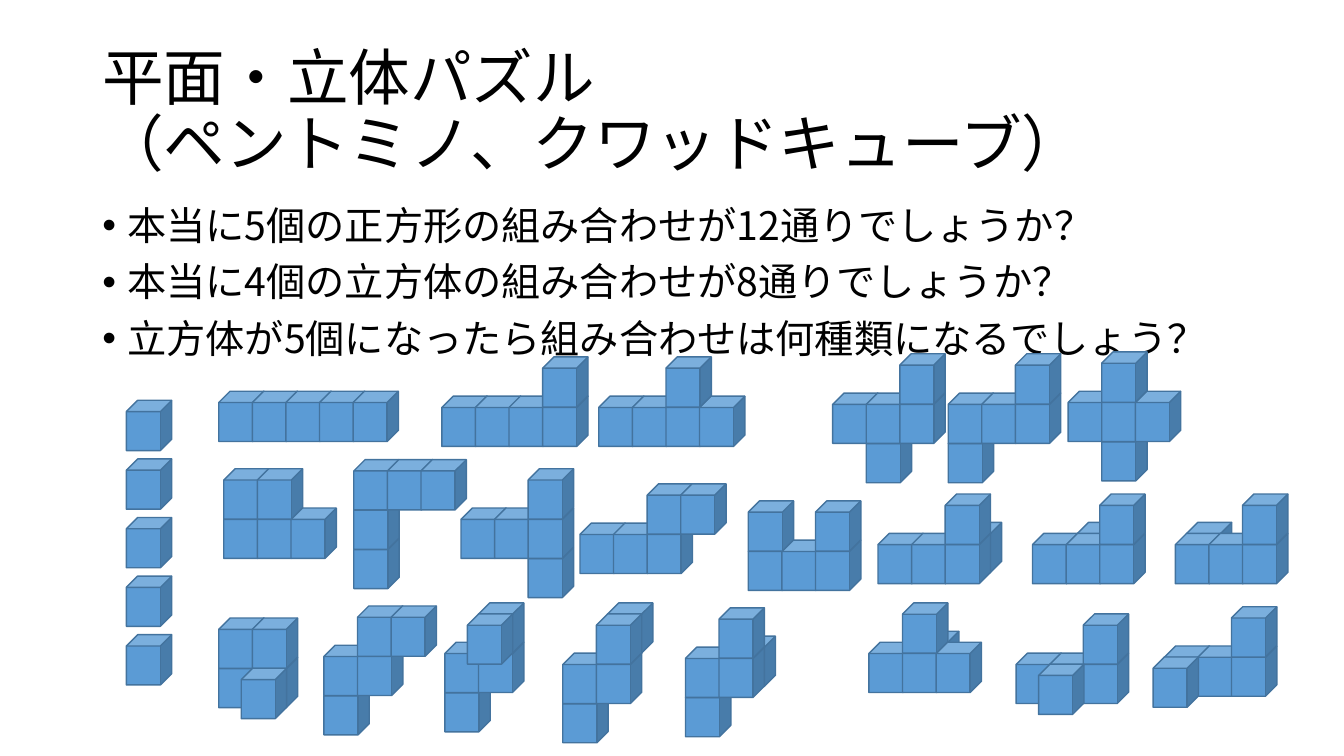
from dataclasses import dataclass

import pptx
import pptx.dml.color
import pptx.enum.shapes
import pptx.enum.text
import pptx.oxml.ns
import pptx.util
from lxml import etree

BLUE = pptx.dml.color.RGBColor(0x5B, 0x9B, 0xD5)
EDGE = pptx.dml.color.RGBColor(0x43, 0x73, 0x9E)
BLACK = pptx.dml.color.RGBColor(0, 0, 0)
FONT = "Noto Sans CJK JP"

# Slide grid: 40 columns by 20 rows
WIDTH, HEIGHT = pptx.util.Inches(13.33), pptx.util.Inches(7.5)
COL, ROW = WIDTH / 40, HEIGHT / 20

# Cube size and the steps between neighbours, in columns and rows
CUBE_W, CUBE_H = 1.35, 1.33
STEP_X, STEP_Y = 1, 1.04
DEPTH_X, DEPTH_Y = 0.33, 0.29


@dataclass(frozen=True)
class Piece:
    """Cubes marked # in rows split by /, for up to three layers."""
    col: float
    row: float
    main: str
    back: str = ""
    front: str = ""


TITLE = "平面・立体パズル\v（ペントミノ、クワッドキューブ）"
QUESTIONS = [
    "本当に5個の正方形の組み合わせが12通りでしょうか？",
    "本当に4個の立方体の組み合わせが8通りでしょうか？",
    "立方体が5個になったら組み合わせは何種類になるでしょう？",
]

SINGLES = [Piece(3.76, 10.59 + 1.55 * i, "#") for i in range(5)]
FLAT_PIECES = [
    Piece(6.51, 10.35, "#####"),
    Piece(13.15, 9.44, "...#/####"),
    Piece(17.82, 9.44, "..#./####"),
    Piece(24.78, 9.36, "..#/###/.#."),
    Piece(28.22, 9.36, "..#/###/#.."),
    Piece(31.79, 9.31, ".#./###/.#."),
    Piece(6.66, 12.4, "##./###"),
    Piece(10.53, 12.16, "###/#../#.."),
    Piece(13.72, 12.4, "..#/###/..#"),
    Piece(17.26, 12.8, "..##/###."),
    Piece(22.27, 13.25, "#.#/###"),
    Piece(9.64, 16.03, ".##/##./#.."),
]
SOLID_PIECES = [
    Piece(26.13, 13.07, "..#/###", back=".../..#"),
    Piece(30.73, 13.07, "..#/###", back=".../.#."),
    Piece(34.98, 13.07, "..#/###", back=".../#.."),
    Piece(6.51, 16.35, "##/##", front="../.#"),
    Piece(13.24, 15.95, ".#/##/#.", front=".#"),
    Piece(16.75, 16.24, ".#/##/#.", back=".#"),
    Piece(20.4, 16.08, ".#/##/#.", back="../.#"),
    Piece(25.86, 15.95, ".#./###", back=".../.#."),
    Piece(30.24, 16.24, "..#/###", front=".../.#."),
    Piece(34.65, 16.05, "..#/###", front=".../#.."),
]


def add_bullet(p) -> None:
    pPr = p._p.get_or_add_pPr()
    indent = pptx.util.Inches(0.25)
    pPr.set("marL", str(indent))
    pPr.set("indent", str(-indent))
    etree.SubElement(pPr, pptx.oxml.ns.qn("a:buFont"), typeface="Arial")
    etree.SubElement(pPr, pptx.oxml.ns.qn("a:buChar"), char="•")


def add_text(s, lines: list[str], row: float, rows: float, *, size: float,
             before: float = 0, bullet: bool = False,
             anchor=pptx.enum.text.MSO_ANCHOR.TOP) -> None:
    box = s.shapes.add_textbox(round(2.75 * COL), round(row * ROW),
                               round(34.5 * COL), round(rows * ROW))
    tf = box.text_frame
    tf.word_wrap = True
    tf.vertical_anchor = anchor
    for i, line in enumerate(lines):
        p = tf.add_paragraph() if i else tf.paragraphs[0]
        p.text = line
        p.line_spacing = 0.9
        p.space_before = pptx.util.Pt(before)
        if bullet:
            add_bullet(p)
        for r in p.runs:
            r.font.size = pptx.util.Pt(size)
            r.font.name = FONT
            r.font.color.rgb = BLACK
            etree.SubElement(r.font._element, pptx.oxml.ns.qn("a:ea"), typeface=FONT)


def draw_cube(s, col: float, row: float) -> None:
    sp = s.shapes.add_shape(pptx.enum.shapes.MSO_SHAPE.CUBE,
                            round(col * COL), round(row * ROW),
                            round(CUBE_W * COL), round(CUBE_H * ROW))
    sp.shadow.inherit = False
    sp.fill.solid()
    sp.fill.fore_color.rgb = BLUE
    sp.line.color.rgb = EDGE
    sp.line.width = pptx.util.Pt(1)


def draw_piece(s, piece: Piece) -> None:
    # Farther cubes first: back to front, bottom to top, left to right
    for depth, layer in ((1, piece.back), (0, piece.main), (-1, piece.front)):
        for y, cells in reversed(list(enumerate(layer.split("/")))):
            for x, cell in enumerate(cells):
                if cell == "#":
                    draw_cube(s, piece.col + x * STEP_X + depth * DEPTH_X,
                              piece.row + y * STEP_Y - depth * DEPTH_Y)


def main() -> None:
    prs = pptx.Presentation()
    prs.slide_width, prs.slide_height = WIDTH, HEIGHT
    s = prs.slides.add_slide(prs.slide_layouts[6])

    # Title and questions
    add_text(s, [TITLE], 1.07, 3.87, size=44,
             anchor=pptx.enum.text.MSO_ANCHOR.MIDDLE)
    add_text(s, QUESTIONS, 5.33, 12.69, size=28, before=10, bullet=True)

    # Puzzle pieces
    for piece in SINGLES + FLAT_PIECES + SOLID_PIECES:
        draw_piece(s, piece)

    prs.save("out.pptx")


if __name__ == "__main__":
    main()
